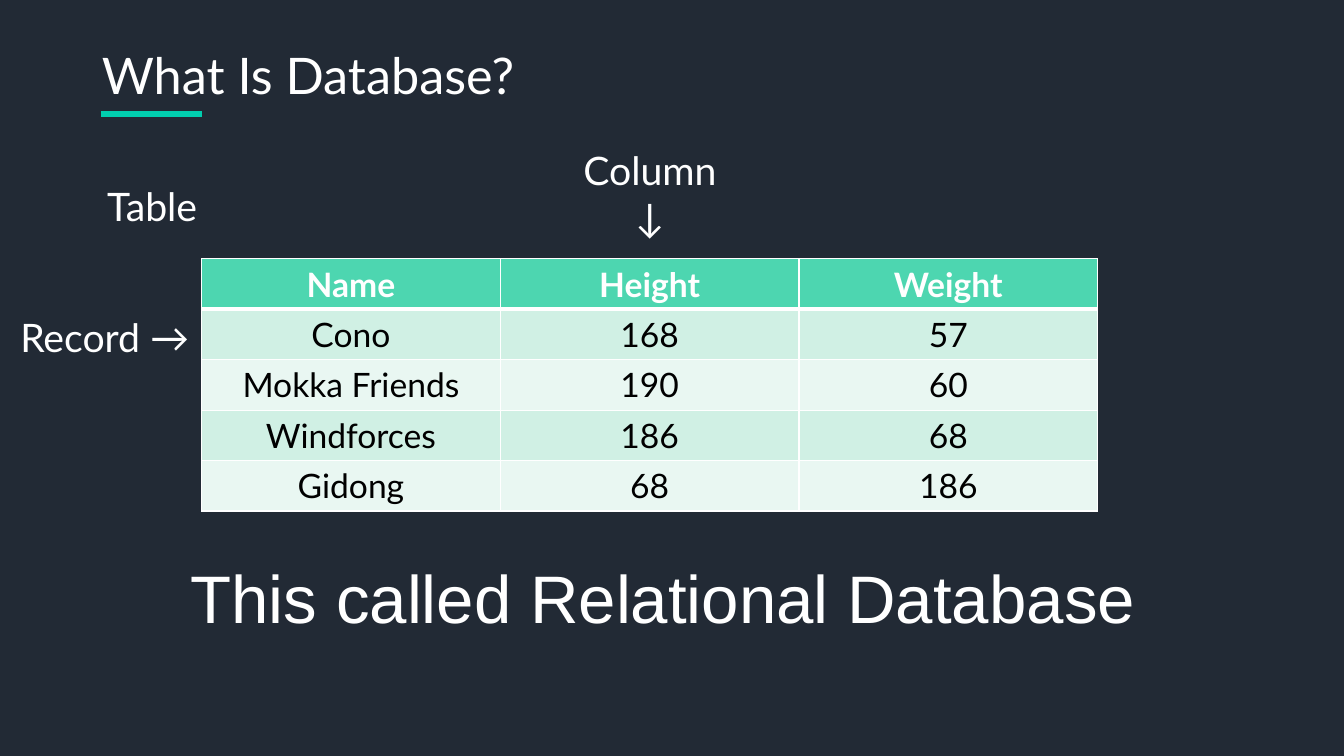
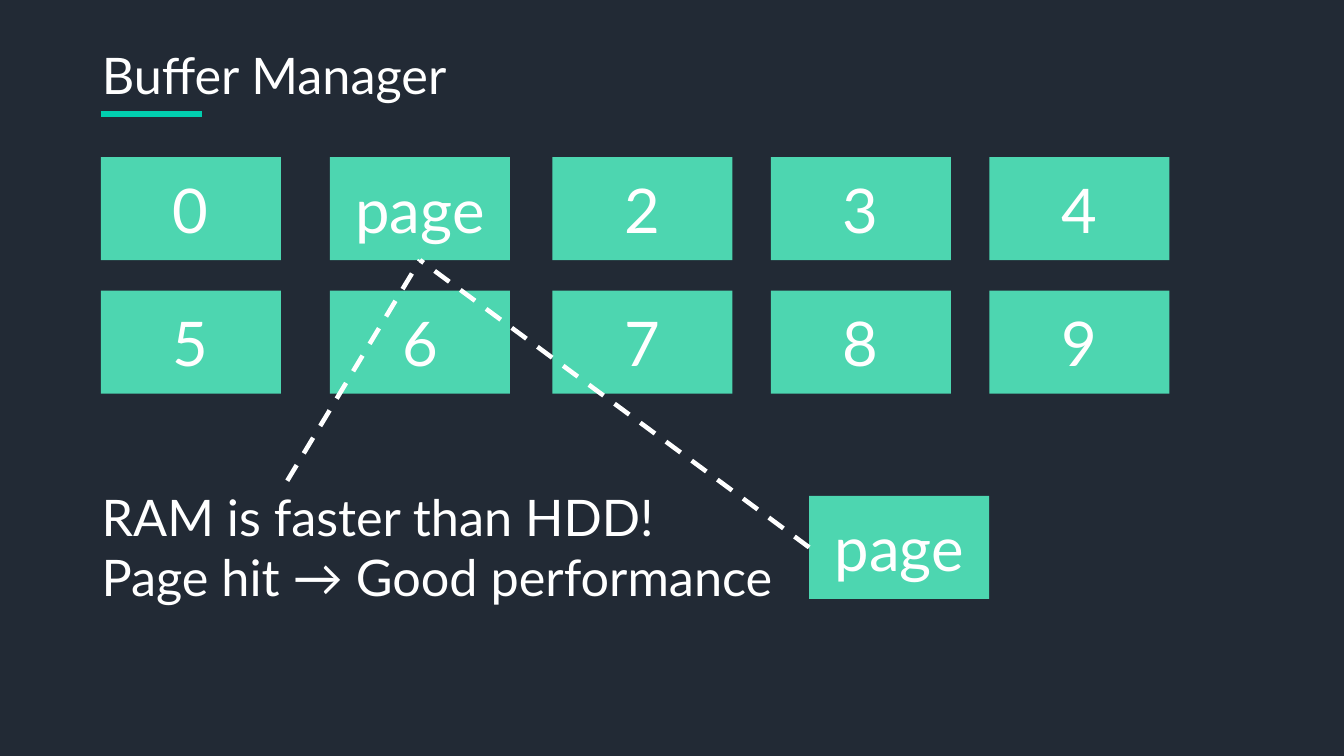
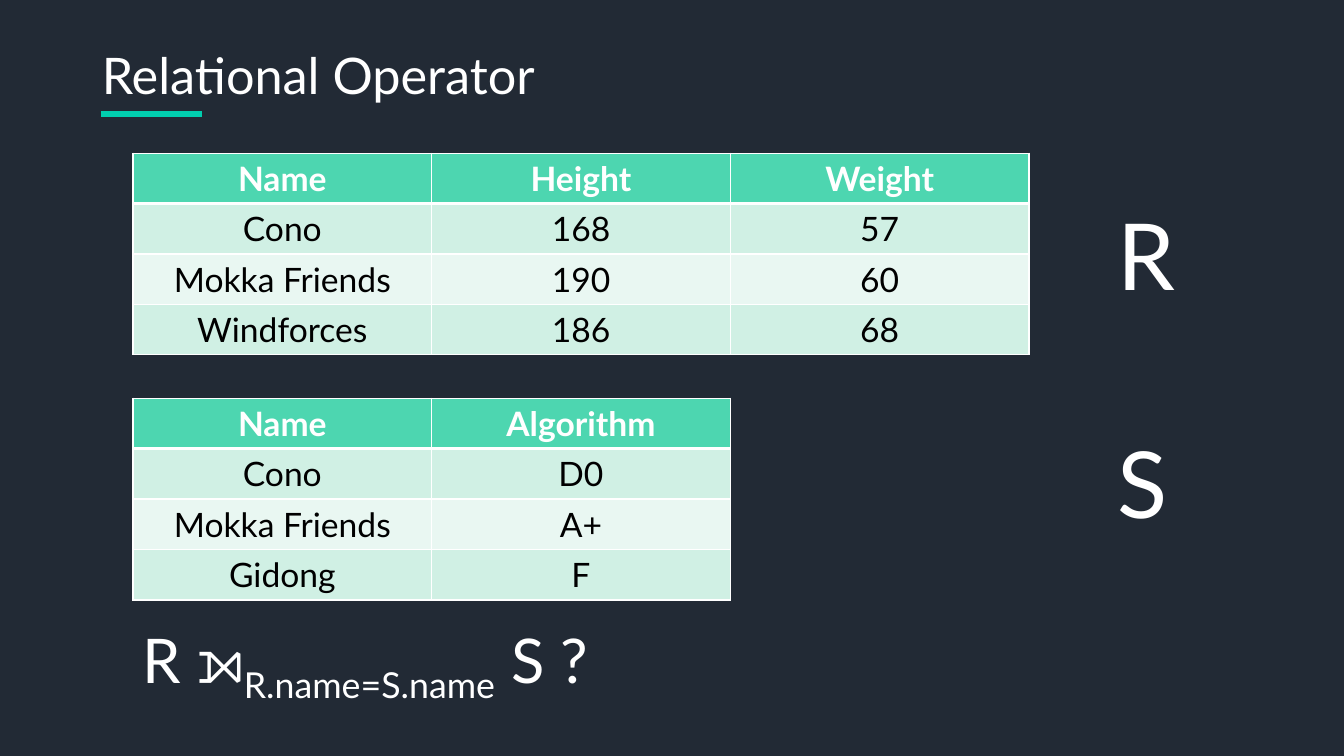
"""Build three slides on relational database basics."""
from lxml.etree import SubElement
from pptx import Presentation
from pptx.dml.color import RGBColor
from pptx.enum.dml import MSO_LINE_DASH_STYLE as Dash
from pptx.enum.shapes import MSO_CONNECTOR as Connector, MSO_SHAPE as Shape
from pptx.enum.text import MSO_ANCHOR as Anchor, MSO_AUTO_SIZE as AutoSize, PP_ALIGN as Align
from pptx.oxml import parse_xml
from pptx.oxml.ns import nsdecls, qn
from pptx.util import Pt

NIGHT, WHITE, BLACK = "222A35", "FFFFFF", "000000"
ACCENT, MINT = "01CEAF", "4DD6B0"
BANDS = ("D0F0E4", "E9F7F2")
FONT = "Lato"
TITLE_ONLY = 5
COLUMN_WIDTH, ROW_HEIGHT = 213.36, 36
PAGE_WIDTH, PAGE_HEIGHT = 128.6, 73.6
PAGE_LEFTS = (72, 235.7, 394.5, 550.6, 706.7)
PAGE_TOPS = (112.2, 207.6)

PEOPLE = [
    ("Name", "Height", "Weight"),
    ("Cono", "168", "57"),
    ("Mokka Friends", "190", "60"),
    ("Windforces", "186", "68"),
]
GRADES = [
    ("Name", "Algorithm"),
    ("Cono", "D0"),
    ("Mokka Friends", "A+"),
    ("Gidong", "F"),
]


def paint(target, color):
    """Give a fill, or the fill of a line, one solid colour."""
    target.solid()
    target.fore_color.rgb = RGBColor.from_string(color)


def add_run(paragraph, text, size, color=WHITE, font=FONT, bold=False, baseline=0):
    """Append one formatted run to a paragraph."""
    run = paragraph.add_run()
    run.text = text
    run.font.name, run.font.size, run.font.bold = font, Pt(size), bold
    run.font.color.rgb = RGBColor.from_string(color)
    if baseline:
        run._r.get_or_add_rPr().set("baseline", str(baseline * 1000))


def add_text(slide, box, lines, size, align=Align.LEFT, font=FONT, wrap=False):
    """Add a text box whose lines are lists of (text, baseline) or plain strings."""
    frame = slide.shapes.add_textbox(*map(Pt, box)).text_frame
    frame.word_wrap = wrap
    frame.auto_size = AutoSize.SHAPE_TO_FIT_TEXT
    for index, line in enumerate(lines):
        paragraph = frame.add_paragraph() if index else frame.paragraphs[0]
        paragraph.alignment = align
        for text, baseline in [(line, 0)] if isinstance(line, str) else line:
            add_run(paragraph, text, size, font=font, baseline=baseline)


def add_line(slide, start, end, color, width, dash=None):
    """Draw a straight line between two points."""
    line = slide.shapes.add_connector(Connector.STRAIGHT, *map(Pt, (*start, *end)))
    paint(line.line.fill, color)
    line.line.width = Pt(width)
    if dash:
        line.line.dash_style = dash
    SubElement(line._element.spPr, qn("a:effectLst"))
    return line


def add_titled_slide(deck, text, width):
    """Add a slide with its title and the accent rule below."""
    slide = deck.slides.add_slide(deck.slide_layouts[TITLE_ONLY])
    title = slide.shapes.title
    title.left, title.top, title.width, title.height = map(Pt, (65.5, 28, width, 50.9))
    frame = title.text_frame
    frame.word_wrap = False
    frame.auto_size = AutoSize.SHAPE_TO_FIT_TEXT
    frame.vertical_anchor = Anchor.TOP
    frame.paragraphs[0].alignment = Align.LEFT
    add_run(frame.paragraphs[0], text, 36)
    add_line(slide, (72, 81.4), (144, 81.4), ACCENT, 4.5)
    return slide


def set_borders(cell, top, bottom):
    """Draw white borders around a cell."""
    properties = cell._tc.get_or_add_tcPr()
    widths = {"lnL": 1, "lnR": 1, "lnT": top, "lnB": bottom}
    for index, (side, width) in enumerate(widths.items()):
        properties.insert(index, parse_xml(
            f'<a:{side} {nsdecls("a")} w="{Pt(width)}"><a:solidFill>'
            f'<a:srgbClr val="{WHITE}"/></a:solidFill></a:{side}>'))


def add_relation(slide, left, top, records):
    """Add a banded table whose first record is the header."""
    columns, count = len(records[0]), len(records)
    table = slide.shapes.add_table(count, columns, Pt(left), Pt(top),
                                   Pt(columns * COLUMN_WIDTH), Pt(count * ROW_HEIGHT)).table
    for column in table.columns:
        column.width = Pt(COLUMN_WIDTH)
    for row, record in enumerate(records):
        header = row == 0
        table.rows[row].height = Pt(ROW_HEIGHT)
        for column, value in enumerate(record):
            cell = table.cell(row, column)
            paint(cell.fill, MINT if header else BANDS[(row - 1) % 2])
            set_borders(cell, top=3 if row == 1 else 1, bottom=3 if header else 1)
            paragraph = cell.text_frame.paragraphs[0]
            paragraph.alignment = Align.CENTER
            add_run(paragraph, value, 24, WHITE if header else BLACK, bold=header)


def add_page(slide, left, top, label):
    """Add one buffer page as a labelled rectangle."""
    page = slide.shapes.add_shape(Shape.RECTANGLE, *map(Pt, (left, top, PAGE_WIDTH, PAGE_HEIGHT)))
    page.shadow.inherit = False
    paint(page.fill, MINT)
    page.line.fill.background()
    page.text_frame.vertical_anchor = Anchor.MIDDLE
    paragraph = page.text_frame.paragraphs[0]
    paragraph.alignment = Align.CENTER
    add_run(paragraph, label, 44)
    return page


def build_database(deck):
    """Show the parts of a relational table."""
    slide = add_titled_slide(deck, "What Is Database?", 310.3)
    add_relation(slide, 144, 184.9, PEOPLE + [("Gidong", "68", "186")])
    add_text(slide, (73.4, 393.8, 800.6, 65.5), ["This called Relational Database"], 48,
             Align.CENTER, "Arial", wrap=True)
    add_text(slide, (7.4, 220.5, 136.6, 41.2), ["Record →"], 28)
    add_text(slide, (69.1, 126.9, 79.2, 41.2), ["Table"], 28, Align.CENTER)
    add_text(slide, (408.4, 101.2, 111.6, 75.1), ["Column", "↓"], 28, Align.CENTER)


def build_buffer(deck):
    """Show a page held among the numbered buffer slots."""
    slide = add_titled_slide(deck, "Buffer Manager", 263.5)
    slots = [(left, top) for top in PAGE_TOPS for left in PAGE_LEFTS]
    pages = [add_page(slide, left, top, "page" if number == 1 else str(number))
             for number, (left, top) in enumerate(slots)]
    cached = pages[1]
    requested = add_page(slide, 578, 354.2, "page")
    add_text(slide, (65.5, 343.4, 500.4, 94.5),
             ["RAM is faster than HDD!", "Page hit → Good performance"], 36)
    cached_bottom = (PAGE_LEFTS[1] + PAGE_WIDTH / 2, PAGE_TOPS[0] + PAGE_HEIGHT)
    for start, source in (((578, 391), requested), ((205.2, 343.4), None)):
        link = add_line(slide, start, cached_bottom, WHITE, 3.25, Dash.DASH)
        if source:
            link.begin_connect(source, 1)
        link.end_connect(cached, 2)


def build_operator(deck):
    """Show two relations and the join between them."""
    slide = add_titled_slide(deck, "Relational Operator", 326.9)
    add_relation(slide, 95, 109.4, PEOPLE)
    add_text(slide, (95, 440.6, 378.7, 60.5),
             [[("R ⟕", 0), ("R.name=S.name", -25), (" S ?", 0)]], 44)
    add_text(slide, (791.3, 138.2, 54.7, 87.1), ["R"], 66)
    add_relation(slide, 95, 284.4, GRADES)
    add_text(slide, (791.3, 301, 49.7, 87.1), ["S"], 66)


def main():
    """Build and save the deck."""
    deck = Presentation()
    deck.slide_width, deck.slide_height = Pt(960), Pt(540)
    paint(deck.slide_master.background.fill, NIGHT)
    build_database(deck)
    build_buffer(deck)
    build_operator(deck)
    deck.save("out.pptx")


if __name__ == "__main__":
    main()
